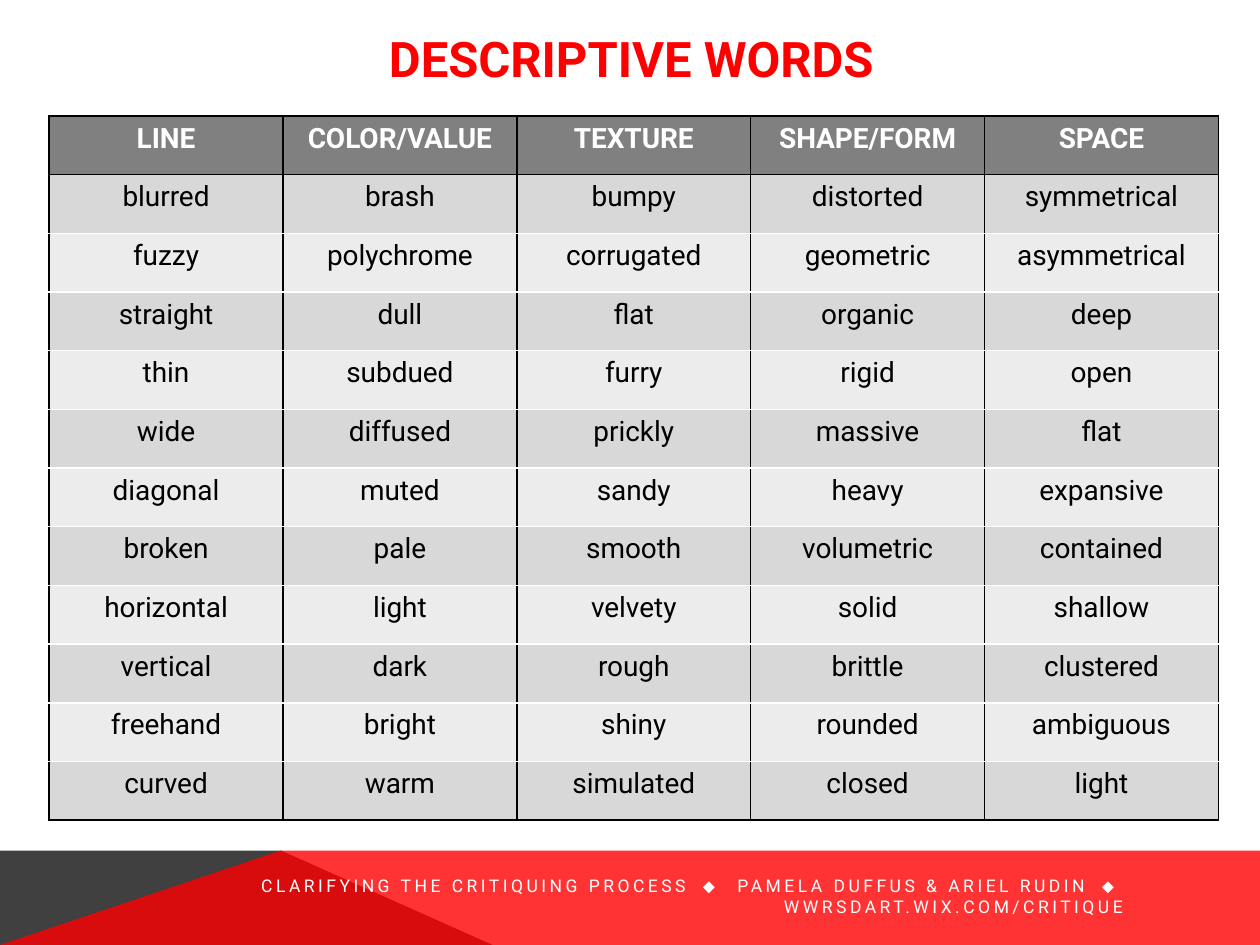
from typing import NamedTuple

from lxml.etree import SubElement
from pptx import Presentation
from pptx.dml.color import RGBColor
from pptx.enum.text import MSO_ANCHOR, MSO_AUTO_SIZE, PP_ALIGN
from pptx.oxml.ns import qn
from pptx.util import Inches, Pt

BLACK = RGBColor(0x00, 0x00, 0x00)
WHITE = RGBColor(0xFF, 0xFF, 0xFF)
RED = RGBColor(0xFF, 0x00, 0x00)
CHARCOAL = RGBColor(0x40, 0x40, 0x40)
HEADER_GRAY = RGBColor(0x80, 0x80, 0x80)
BAND_GRAYS = (RGBColor(0xD8, 0xD8, 0xD8), RGBColor(0xEC, 0xEC, 0xEC))


class Band(NamedTuple):
    points: list[tuple[float, float]]
    color: RGBColor
    opacity: int


class WordColumn(NamedTuple):
    heading: str
    words: str


BANDS = [
    Band([(0, 7.5), (0, 6.75), (2.23, 6.75), (3.91, 7.5)], CHARCOAL, 100),
    Band([(0, 7.5), (2.23, 6.75), (10, 6.75), (10, 7.5)], RED, 80),
]

COLUMNS = [
    WordColumn("LINE", "blurred fuzzy straight thin wide diagonal broken "
               "horizontal vertical freehand curved"),
    WordColumn("COLOR/VALUE", "brash polychrome dull subdued diffused muted pale "
               "light dark bright warm"),
    WordColumn("TEXTURE", "bumpy corrugated flat furry prickly sandy smooth "
               "velvety rough shiny simulated"),
    WordColumn("SHAPE/FORM", "distorted geometric organic rigid massive heavy "
               "volumetric solid brittle rounded closed"),
    WordColumn("SPACE", "symmetrical asymmetrical deep open flat expansive "
               "contained shallow clustered ambiguous light"),
]

CREDITS = ["CLARIFYING THE CRITIQUING PROCESS", "PAMELA DUFFUS & ARIEL RUDIN",
           "WWRSDART.WIX.COM/CRITIQUE"]


def add_span(para, text: str, *, size: float, color: RGBColor, font: str = "Roboto",
             bold: bool = False, spacing: float = 0) -> None:
    """Add a run; spacing is the extra space between letters in points."""
    span = para.add_run()
    span.text = text
    span.font.size = Pt(size)
    span.font.name = font
    span.font.bold = bold
    span.font.color.rgb = color
    if spacing:
        span.font._element.set("spc", str(round(spacing * 100)))


def add_band(page, band: Band) -> None:
    corners = [(Inches(x), Inches(y)) for x, y in band.points]
    builder = page.shapes.build_freeform(*corners[0])
    builder.add_line_segments(corners[1:], close=True)
    shape = builder.convert_to_shape()
    shape.shadow.inherit = False
    shape.line.fill.background()
    shape.fill.solid()
    shape.fill.fore_color.rgb = band.color
    if band.opacity < 100:
        color = shape._element.spPr.find(qn("a:solidFill"))[0]
        SubElement(color, qn("a:alpha"), val=str(band.opacity * 1000))


def set_borders(cell, top: RGBColor, bottom: RGBColor) -> None:
    """Draw black sides and the given top and bottom, all one point wide."""
    properties = cell._tc.get_or_add_tcPr()
    for side, color in zip("LRTB", (BLACK, BLACK, top, bottom)):
        line = SubElement(properties, qn(f"a:ln{side}"), w=str(Pt(1)))
        fill = SubElement(line, qn("a:solidFill"))
        SubElement(fill, qn("a:srgbClr"), val=str(color))


def add_title(page) -> None:
    title = page.shapes.title
    title.left, title.top = Inches(0.9), Inches(0.18)
    title.width, title.height = Inches(8.22), Inches(0.6)
    frame = title.text_frame
    frame.vertical_anchor = MSO_ANCHOR.TOP
    frame.auto_size = MSO_AUTO_SIZE.NONE
    para = frame.paragraphs[0]
    para.alignment = PP_ALIGN.CENTER
    add_span(para, "DESCRIPTIVE WORDS", size=28, color=RED, bold=True)


def add_credits(page) -> None:
    box = page.shapes.add_textbox(Inches(0.9), Inches(6.96), Inches(8.11), Inches(0.3))
    frame = box.text_frame
    frame.word_wrap = True
    frame.vertical_anchor = MSO_ANCHOR.MIDDLE
    para = frame.paragraphs[0]
    para.alignment = PP_ALIGN.RIGHT
    for index, credit in enumerate(CREDITS):
        if index:
            add_span(para, " ⬥ ", size=10, color=WHITE, font="Arial", spacing=5)
        add_span(para, credit, size=10, color=WHITE, spacing=2)


def add_word_table(page) -> None:
    rows = list(zip(*([column.heading, *column.words.split()] for column in COLUMNS)))
    last = len(rows) - 1
    table = page.shapes.add_table(len(rows), len(COLUMNS), Inches(0.39), Inches(0.92),
                                  Inches(9.28), Inches(5.59)).table
    table.horz_banding = False
    for r, words in enumerate(rows):
        is_header = r == 0
        for c, word in enumerate(words):
            cell = table.cell(r, c)
            set_borders(cell, top=BLACK if r <= 1 else WHITE,
                        bottom=BLACK if r in (0, last) else WHITE)
            cell.fill.solid()
            cell.fill.fore_color.rgb = HEADER_GRAY if is_header else BAND_GRAYS[(r - 1) % 2]
            para = cell.text_frame.paragraphs[0]
            para.alignment = PP_ALIGN.CENTER
            add_span(para, word, size=16, color=WHITE if is_header else BLACK,
                     bold=is_header)


def main() -> None:
    deck = Presentation()
    deck.slide_width, deck.slide_height = Inches(10), Inches(7.5)
    page = deck.slides.add_slide(deck.slide_layouts[5])
    for band in BANDS:
        add_band(page, band)
    add_credits(page)
    add_title(page)
    add_word_table(page)
    deck.save("out.pptx")


if __name__ == "__main__":
    main()
